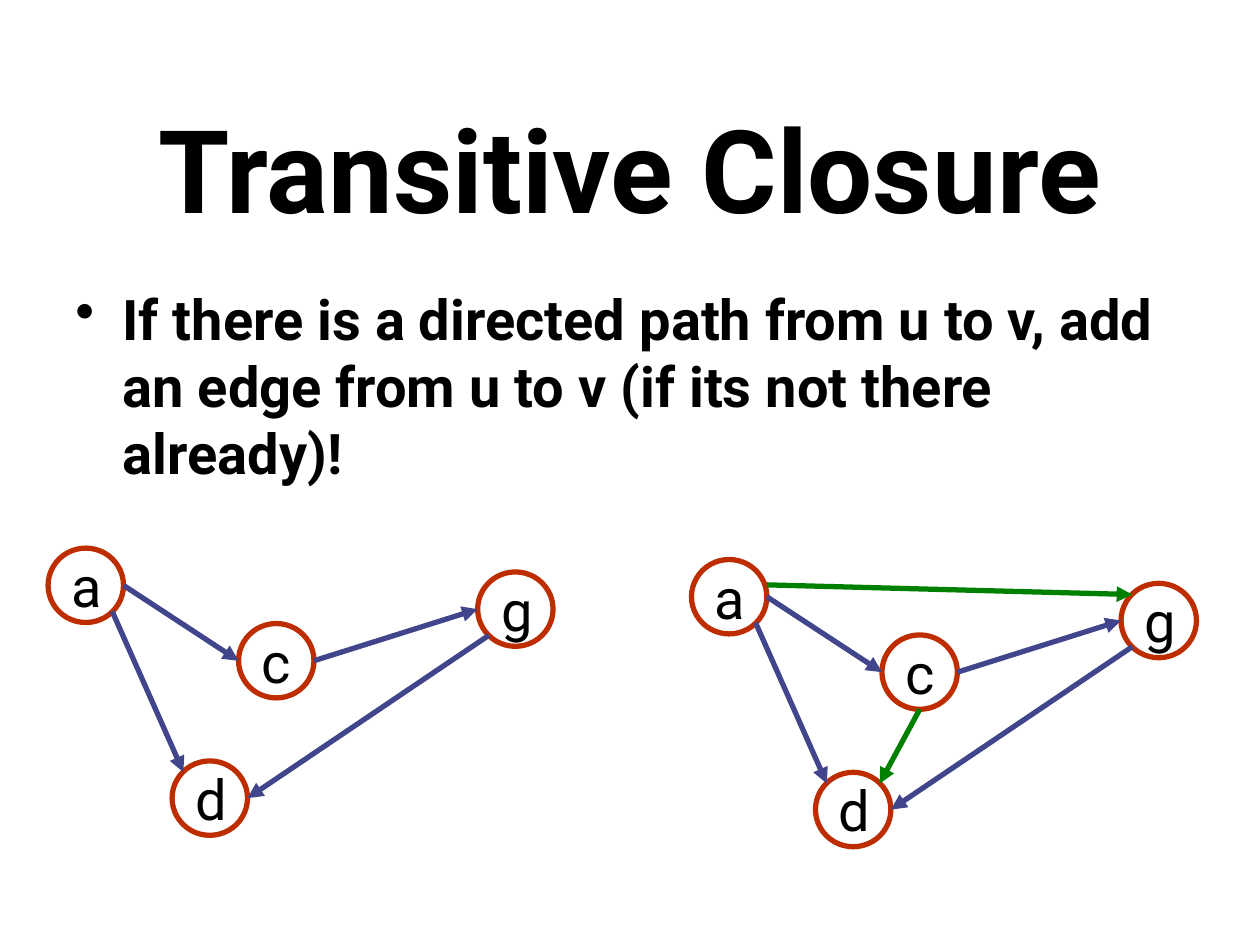
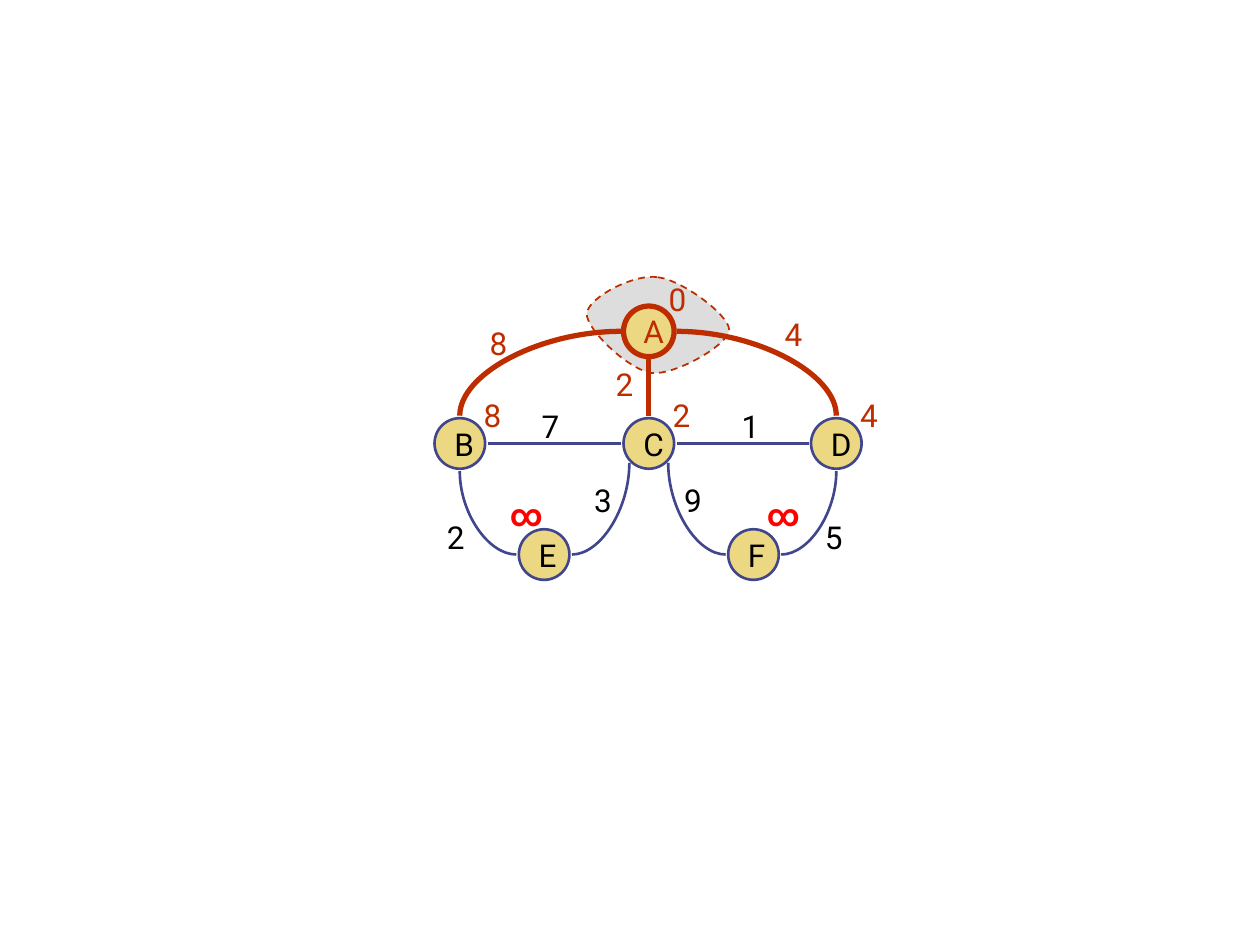
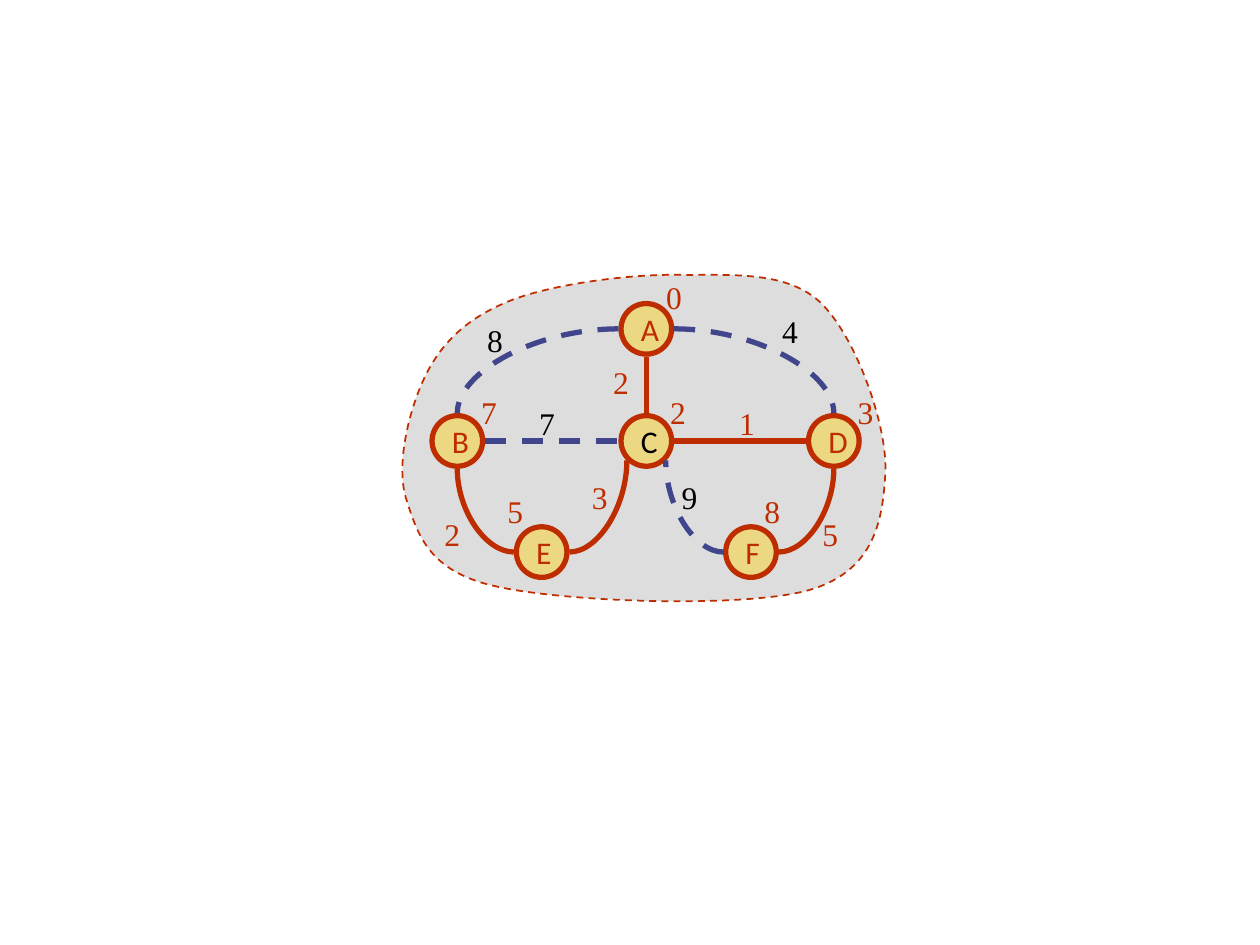
from lxml import etree
from pptx import Presentation
from pptx.dml.color import RGBColor
from pptx.enum.dml import MSO_LINE
from pptx.enum.shapes import MSO_CONNECTOR, MSO_SHAPE
from pptx.enum.text import MSO_ANCHOR, MSO_AUTO_SIZE, PP_ALIGN
from pptx.oxml.ns import qn
from pptx.util import Cm, Pt

ELLIPSE = MSO_SHAPE.OVAL
STRAIGHT = MSO_CONNECTOR.STRAIGHT
CURVE = MSO_CONNECTOR.CURVE
DASH = MSO_LINE.DASH
LEFT, CENTER = PP_ALIGN.LEFT, PP_ALIGN.CENTER
TOP, MIDDLE = MSO_ANCHOR.TOP, MSO_ANCHOR.MIDDLE
FIT_SHAPE = MSO_AUTO_SIZE.SHAPE_TO_FIT_TEXT

BLACK, WHITE, GRAY = "000000", "FFFFFF", "DDDDDD"
RED, BRIGHT_RED, BLUE, GREEN, SAND = "BE2D00", "FF0000", "40458C", "008000", "ECD882"
MAIN_FONT = "Roboto"

PORTS = {
    "left": (-1, 0), "right": (1, 0), "top": (0, -1), "bottom": (0, 1),
    "upper left": (-0.7, -0.7), "upper right": (0.7, -0.7),
    "lower left": (-0.7, 0.7), "lower right": (0.7, 0.7),
    "high right": (1, -0.32),
}

PATH_NODE_SIZE = (1.52, 1.5)
PATH_NODES = {"a": (0, 0), "d": (2.5, 4.29), "c": (3.84, 1.52), "g": (8.66, 0.48)}
PATH_EDGES = [
    ("a", "lower right", "d", "upper left"),
    ("a", "right", "c", "left"),
    ("c", "right", "g", "left"),
    ("g", "lower left", "d", "right"),
]
CLOSURE_EDGES = [
    ("a", "high right", "g", "upper left"),
    ("c", "bottom", "d", "upper right"),
]

TREE_NODE_SIZE = (1.02, 1.02)
TREE_NODES = {
    "A": (3.81, 0), "B": (0, 2.26), "C": (3.81, 2.26),
    "D": (7.59, 2.26), "E": (1.7, 4.5), "F": (5.92, 4.5),
}
WEIGHTED_EDGES = [
    ("A", "left", "B", "top", "8", (0.86, 0.23)),
    ("A", "bottom", "C", "top", "2", (3.4, 1.07)),
    ("A", "right", "D", "top", "4", (6.81, 0.05)),
    ("B", "right", "C", "left", "7", (1.91, 1.91)),
    ("C", "right", "D", "left", "1", (5.94, 1.91)),
    ("E", "left", "B", "bottom", "2", (0, 4.14)),
    ("E", "right", "C", "lower left", "3", (2.97, 3.4)),
    ("F", "left", "C", "lower right", "9", (4.78, 3.4)),
    ("F", "right", "D", "bottom", "5", (7.62, 4.14)),
]
DISTANCE_OFFSETS = {
    "A": (0.66, -0.64), "B": (0.74, -0.58), "C": (0.74, -0.58),
    "D": (0.74, -0.58), "E": (-0.43, -0.82), "F": (0.53, -0.82),
}

FIRST_CLOUD = [
    (4.5, -0.58), (4.98, -0.53), (5.94, 0.18), (5.94, 0.48),
    (5.92, 0.79), (4.85, 1.4), (4.37, 1.35),
    (3.89, 1.27), (3.05, 0.46), (3.07, 0.15),
    (3.1, -0.18), (4.04, -0.66), (4.5, -0.58),
]
FINAL_CLOUD = [
    (4.88, -0.58), (5.92, -0.56), (7.11, -0.69), (7.82, -0.03),
    (8.53, 0.64), (9.17, 2.41), (9.14, 3.38),
    (9.09, 4.34), (8.94, 5.38), (7.62, 5.77),
    (6.32, 6.15), (2.62, 6.02), (1.24, 5.69),
    (-0.1, 5.38), (-0.3, 4.62), (-0.53, 3.91),
    (-0.74, 3.18), (-0.43, 2.01), (-0.08, 1.35),
    (0.28, 0.69), (0.79, 0.25), (1.63, -0.08),
    (2.44, -0.38), (3.84, -0.58), (4.88, -0.58),
]


def rgb(color):
    return RGBColor.from_string(color)


def style_line(line, color, width, dash=None):
    line.color.rgb = rgb(color)
    line.width = Pt(width)
    if dash is not None:
        line.dash_style = dash


def write(shape, text, size, color, font=MAIN_FONT, bold=False,
          align=LEFT, anchor=TOP, wrap=False):
    frame = shape.text_frame
    frame.text = text
    frame.word_wrap = wrap
    frame.vertical_anchor = anchor
    para = frame.paragraphs[0]
    para.alignment = align
    span = para.runs[0].font
    span.name, span.size, span.bold = font, Pt(size), bold
    span.color.rgb = rgb(color)
    return para


def add_text(page, box, text, size, color, **options):
    shape = page.shapes.add_textbox(*(Cm(value) for value in box))
    return shape, write(shape, text, size, color, **options)


def add_node(page, box, name, fill, outline, width, size, color, font):
    node = page.shapes.add_shape(ELLIPSE, *(Cm(value) for value in box))
    node.shadow.inherit = False
    node.fill.solid()
    node.fill.fore_color.rgb = rgb(fill)
    style_line(node.line, outline, width)
    write(node, name, size, color, font, anchor=MIDDLE)


def port_point(origin, position, size, port, gap):
    return [Cm(base + offset + length / 2 + side * (length / 2 + gap))
            for base, offset, length, side in zip(origin, position, size, PORTS[port])]


def add_edge(page, origin, nodes, size, edge, color, width, dash=None, gap=0, arrow=False):
    start, start_port, end, end_port = edge
    curved = PORTS[start_port][1] == 0 and end_port in (
        "top", "bottom", "lower left", "lower right")
    line = page.shapes.add_connector(
        CURVE if curved else STRAIGHT,
        *port_point(origin, nodes[start], size, start_port, gap),
        *port_point(origin, nodes[end], size, end_port, gap))
    style_line(line.line, color, width, dash)
    properties = line.element.spPr
    if curved:
        properties.find(qn("a:prstGeom")).set("prst", "curvedConnector2")
    if arrow:
        etree.SubElement(properties.find(qn("a:ln")), qn("a:tailEnd"), type="triangle")
    etree.SubElement(properties, qn("a:effectLst"))


def add_cloud(page, origin, points):
    corners = [(Cm(origin[0] + x), Cm(origin[1] + y)) for x, y in points]
    builder = page.shapes.build_freeform(*corners[0])
    builder.add_line_segments(corners[1:], close=True)
    cloud = builder.convert_to_shape()
    segments = list(cloud.element.iter(qn("a:lnTo")))
    for index in range(0, len(segments), 3):
        curve = etree.Element(qn("a:cubicBezTo"))
        segments[index].addprevious(curve)
        for segment in segments[index:index + 3]:
            curve.append(segment[0])
            segment.getparent().remove(segment)
    cloud.shadow.inherit = False
    cloud.fill.solid()
    cloud.fill.fore_color.rgb = rgb(GRAY)
    style_line(cloud.line, RED, 1, DASH)


def add_heading(page, box, text):
    add_text(page, box, text, 66, BLACK, bold=True, align=CENTER, anchor=MIDDLE, wrap=True)


def add_bullet(page, box, text):
    para = add_text(page, box, text, 32, BLACK, bold=True, wrap=True)[1]
    properties = para._p.get_or_add_pPr()
    properties.set("marL", str(Cm(0.95)))
    properties.set("indent", str(-Cm(0.95)))
    etree.SubElement(properties, qn("a:buChar"), char="•")


def add_path_graph(page, origin, extra_edges=()):
    for name, (x, y) in PATH_NODES.items():
        add_node(page, (origin[0] + x, origin[1] + y, *PATH_NODE_SIZE),
                 name, WHITE, RED, 3, 32, BLACK, MAIN_FONT)
    for color, edges in ((BLUE, PATH_EDGES), (GREEN, extra_edges)):
        for edge in edges:
            add_edge(page, origin, PATH_NODES, PATH_NODE_SIZE, edge, color, 3, arrow=True)


def add_weight(page, origin, position, text, color, font):
    endless = text == "∞"
    box = (origin[0] + position[0], origin[1] + position[1], 0.97 if endless else 0.86, 1.02)
    label = add_text(page, box, text, 18, BRIGHT_RED if endless else color,
                     font=font, bold=endless)[0]
    label.text_frame.auto_size = FIT_SHAPE


def add_tree_graph(page, origin, cloud, distances, chosen_edges, red_outlines, red_names,
                   plain_width, plain_dash, node_font, label_font):
    add_cloud(page, origin, cloud)
    for name, (x, y) in TREE_NODES.items():
        outline, width = (RED, 3) if name in red_outlines else (BLUE, 1.5)
        add_node(page, (origin[0] + x, origin[1] + y, *TREE_NODE_SIZE), name, SAND,
                 outline, width, 18, RED if name in red_names else BLACK, node_font)
    for *edge, weight, position in WEIGHTED_EDGES:
        chosen = edge[0] + edge[2] in chosen_edges
        style = (RED, 3, None) if chosen else (BLUE, plain_width, plain_dash)
        add_edge(page, origin, TREE_NODES, TREE_NODE_SIZE, edge, *style, gap=0.05)
        add_weight(page, origin, position, weight, RED if chosen else BLACK, label_font)
    for (name, (x, y)), distance in zip(TREE_NODES.items(), distances):
        shift_x, shift_y = DISTANCE_OFFSETS[name]
        add_weight(page, origin, (x + shift_x, y + shift_y), distance, RED, label_font)


def closure_slide(page):
    add_heading(page, (1.27, 1.78, 22.86, 3.18), "Transitive Closure")
    add_bullet(page, (1.27, 5.61, 22.86, 4.57),
               "If there is a directed path from u to v, add an edge from u to v "
               "(if its not there already)!")
    add_path_graph(page, (0.97, 11.05))
    add_path_graph(page, (13.94, 11.28), CLOSURE_EDGES)


def first_step_slide(page):
    add_tree_graph(page, (8.76, 6.17), FIRST_CLOUD, "0824∞∞", ("AB", "AC", "AD"),
                   "A", "A", 1.5, None, MAIN_FONT, MAIN_FONT)


def final_step_slide(page):
    add_tree_graph(page, (8.71, 6.12), FINAL_CLOUD, "072358",
                   ("AC", "CD", "EB", "EC", "FD"), "ABCDEF", "ABDEF",
                   3, DASH, "Calibri", "Times New Roman")


def main():
    deck = Presentation()
    deck.slide_width, deck.slide_height = Cm(25.4), Cm(19.05)
    for build in (closure_slide, first_step_slide, final_step_slide):
        build(deck.slides.add_slide(deck.slide_layouts[6]))
    deck.save("out.pptx")


if __name__ == "__main__":
    main()
